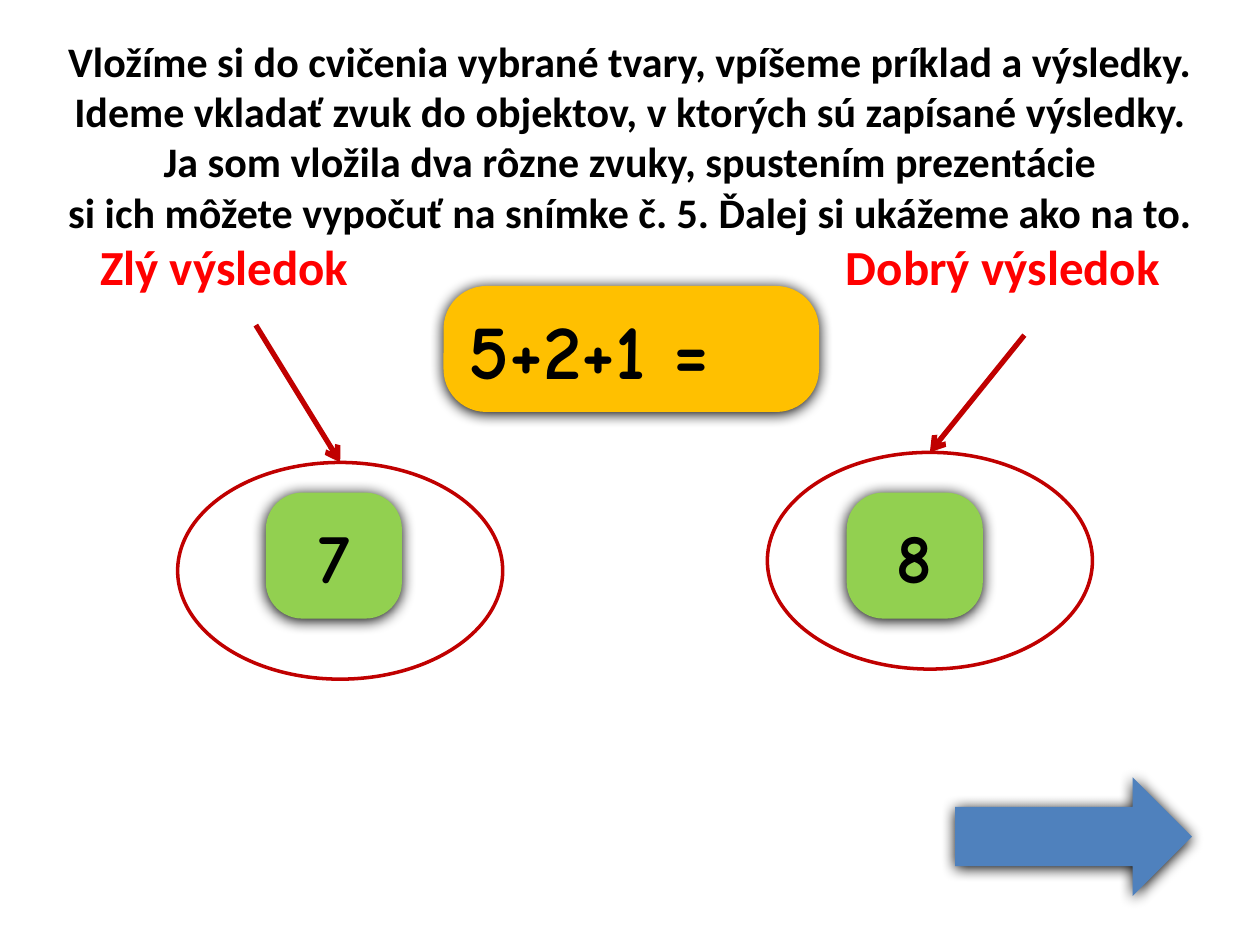
import lxml.etree
import pptx
import pptx.dml.color
import pptx.enum.shapes
import pptx.enum.text
import pptx.oxml
import pptx.oxml.ns
import pptx.util

Inches = pptx.util.Inches
Pt = pptx.util.Pt
SHAPE = pptx.enum.shapes.MSO_SHAPE
ALIGN = pptx.enum.text.PP_ALIGN
NS = 'xmlns:a="http://schemas.openxmlformats.org/drawingml/2006/main"'

INSTRUCTIONS = [
    "Vložíme si do cvičenia vybrané tvary, vpíšeme príklad a výsledky. "
    "Ideme vkladať zvuk do objektov, v ktorých sú zapísané výsledky.",
    "Ja som vložila dva rôzne zvuky, spustením prezentácie",
    "si ich môžete vypočuť na snímke č. 5. Ďalej si ukážeme ako na to.",
]
DARK_RED = "C00000"


def color(hex_value):
    return pptx.dml.color.RGBColor.from_string(hex_value)


def add_run(paragraph, text, hex_value, **font_format):
    run = paragraph.add_run()
    run.text = text
    for key, value in {"bold": True, **font_format}.items():
        setattr(run.font, key, value)
    run.font.color.rgb = color(hex_value)


def add_plain_shape(slide, kind, box):
    shape = slide.shapes.add_shape(kind, *map(Inches, box))
    shape.shadow.inherit = False
    return shape


def add_filled_shape(slide, kind, box, fill):
    """Add a borderless shape with a soft black shadow."""
    shape = add_plain_shape(slide, kind, box)
    shape.fill.solid()
    shape.fill.fore_color.rgb = color(fill)
    shape.line.fill.background()
    effects = shape._element.spPr.find(pptx.oxml.ns.qn("a:effectLst"))
    effects.append(pptx.oxml.parse_xml(
        f'<a:outerShdw {NS} blurRad="{Pt(8.5)}" dist="{Pt(1)}" dir="5400000" '
        'algn="ctr" rotWithShape="0"><a:srgbClr val="000000"/></a:outerShdw>'))
    return shape


def add_card(slide, box, fill, rounding, text, size, alignment):
    card = add_filled_shape(slide, SHAPE.ROUNDED_RECTANGLE, box, fill)
    card.adjustments[0] = rounding
    card.text_frame.vertical_anchor = pptx.enum.text.MSO_ANCHOR.MIDDLE
    paragraph = card.text_frame.paragraphs[0]
    paragraph.alignment = alignment
    add_run(paragraph, text, "000000", size=Pt(size), name="Comic Neue")


def add_ring(slide, box):
    ring = add_plain_shape(slide, SHAPE.OVAL, box)
    ring.fill.background()
    ring.line.color.rgb = color(DARK_RED)
    ring.line.width = Pt(2)
    return ring


def add_pointer(slide, start, ring):
    """Draw an arrow from a label to the top of a ring."""
    begin = [Inches(value) for value in start]
    pointer = slide.shapes.add_connector(
        pptx.enum.shapes.MSO_CONNECTOR.STRAIGHT, *begin,
        ring.left + ring.width // 2, ring.top)
    pointer.end_connect(ring, 0)
    pointer.line.color.rgb = color(DARK_RED)
    pointer.line.width = Pt(3)
    pointer.line._get_or_add_ln().append(
        pptx.oxml.parse_xml(f'<a:tailEnd {NS} type="arrow"/>'))
    lxml.etree.SubElement(pointer._element.spPr, pptx.oxml.ns.qn("a:effectLst"))


def add_text(slide, box, lines, size, hex_value):
    """Add centred paragraphs in a wrapping text box."""
    frame = slide.shapes.add_textbox(*map(Inches, box)).text_frame
    frame.word_wrap = True
    for index, line in enumerate(lines):
        paragraph = frame.add_paragraph() if index else frame.paragraphs[0]
        paragraph.alignment = ALIGN.CENTER
        add_run(paragraph, line, hex_value, size=Pt(size), name="Calibri")


def main():
    presentation = pptx.Presentation()
    presentation.slide_width = Inches(10)
    presentation.slide_height = Inches(7.5)
    slide = presentation.slides.add_slide(presentation.slide_layouts[6])

    wrong_ring = add_ring(slide, (1.41, 3.67, 2.58, 1.72))
    right_ring = add_ring(slide, (6.09, 3.59, 2.58, 1.72))
    for left, answer in ((6.72, "8"), (2.11, "7")):
        add_card(slide, (left, 3.91, 1.08, 1), "92D050", 0.29,
                 answer, 40, ALIGN.CENTER)
    add_card(slide, (3.52, 2.27, 2.98, 1), "FFC000", 0.34,
             "5+2+1 =", 44, ALIGN.LEFT)
    add_filled_shape(slide, SHAPE.RIGHT_ARROW, (7.58, 6.17, 1.88, 0.94), "4F81BD")

    add_text(slide, (0, 0.23, 10, 1.7), INSTRUCTIONS, 24, "000000")
    for left, width, label in ((0.58, 2.4, "Zlý výsledok"),
                               (6.51, 2.9, "Dobrý výsledok")):
        add_text(slide, (left, 1.83, width, 0.57), [label], 28, "FF0000")

    add_pointer(slide, (8.13, 2.66), right_ring)
    add_pointer(slide, (2.03, 2.58), wrong_ring)
    presentation.save("out.pptx")


if __name__ == "__main__":
    main()
